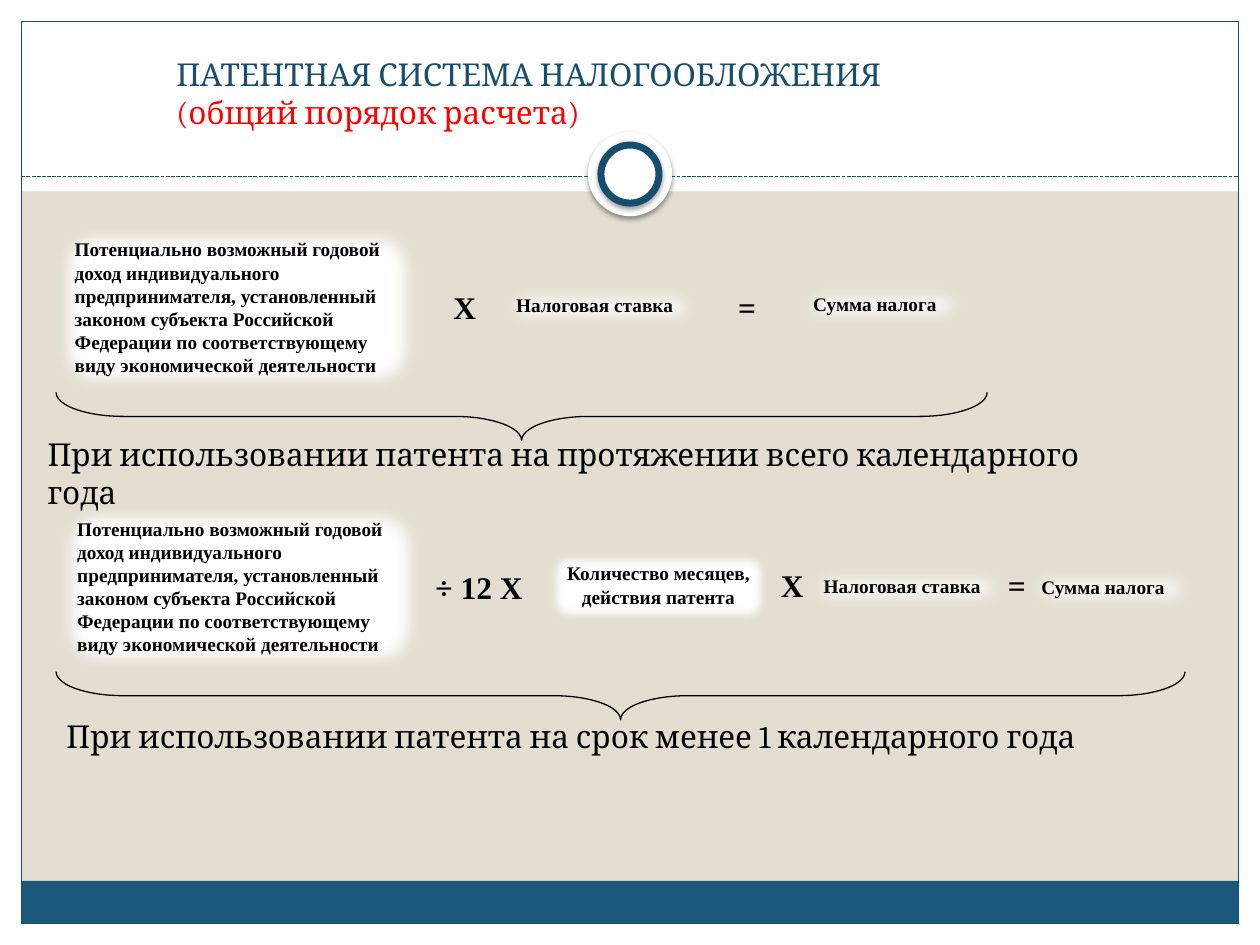
from lxml.etree import SubElement
from pptx import Presentation
from pptx.dml.color import RGBColor
from pptx.enum.dml import MSO_LINE_DASH_STYLE as Dash
from pptx.enum.shapes import MSO_CONNECTOR, MSO_SHAPE
from pptx.enum.text import MSO_ANCHOR, MSO_AUTO_SIZE, PP_ALIGN
from pptx.oxml import parse_xml
from pptx.oxml.ns import nsdecls, qn
from pptx.util import Cm, Pt

COLORS = {"paper": "E3DED1", "white": "FFFFFF", "navy": "184E6D",
          "footer": "1B587C", "black": "000000", "red": "FF0000"}
HEADING_FONT = "Cambria"
FORMULA_FONT = "Times New Roman"
WIDTH, HEIGHT = 25.4, 19.05
MARGIN = 0.43

INCOME = ("Потенциально возможный годовой доход индивидуального предпринимателя, "
          "установленный законом субъекта Российской Федерации по "
          "соответствующему виду экономической деятельности")
RATE = "Налоговая ставка"
TAX = "Сумма налога"
MONTHS = "Количество месяцев, действия патента"


def color(name):
    return RGBColor.from_string(COLORS[name])


class SlideBuilder:
    """Holds the current slide and draws its elements; lengths are in cm."""

    def __init__(self, slide):
        self.slide = slide
        self.shapes = slide.shapes
        fill = slide.background.fill
        fill.solid()
        fill.fore_color.rgb = color("paper")

    def shape(self, kind, box, fill=None, line=None, weight=0.75):
        shape = self.shapes.add_shape(kind, *map(Cm, box))
        shape.shadow.inherit = False
        if fill:
            shape.fill.solid()
            shape.fill.fore_color.rgb = color(fill)
        else:
            shape.fill.background()
        if line:
            shape.line.color.rgb = color(line)
            shape.line.width = Pt(weight)
        else:
            shape.line.fill.background()
        return shape

    def effect(self, shape, xml):
        shape._element.spPr.find(qn("a:effectLst")).append(parse_xml(xml))

    def ring(self, center_x, center_y, diameter, line=None):
        """White circle with a soft shadow below it."""
        box = (center_x - diameter / 2, center_y - diameter / 2, diameter, diameter)
        circle = self.shape(MSO_SHAPE.OVAL, box, "white", line, 4)
        self.effect(circle, f'<a:outerShdw {nsdecls("a")} blurRad="39400" dist="20300" '
                            'dir="5400000" rotWithShape="0"><a:srgbClr val="000000">'
                            '<a:alpha val="38000"/></a:srgbClr></a:outerShdw>')

    def dashed_line(self, left, right, y):
        line = self.shapes.add_connector(
            MSO_CONNECTOR.STRAIGHT, Cm(left), Cm(y), Cm(right), Cm(y))
        line.line.color.rgb = color("navy")
        line.line.width = Pt(0.75)
        line.line.dash_style = Dash.SQUARE_DOT
        SubElement(line._element.spPr, qn("a:effectLst"))

    def title(self, heading, subheading, box):
        title = self.shapes.title
        title.left, title.top, title.width, title.height = map(Cm, box)
        self.shapes._spTree.append(title._element)  # bring in front of the bands
        frame = title.text_frame
        frame.word_wrap = True
        frame.auto_size = MSO_AUTO_SIZE.NONE
        frame.vertical_anchor = MSO_ANCHOR.BOTTOM
        frame.margin_bottom = Cm(0.48)
        paragraph = frame.paragraphs[0]
        paragraph.alignment = PP_ALIGN.LEFT
        paragraph.font.size = Pt(18)
        paragraph.font.name = HEADING_FONT
        first = paragraph.add_run()
        first.text = heading
        first.font.color.rgb = color("navy")
        paragraph.add_line_break()
        second = paragraph.add_run()
        second.text = subheading
        second.font.color.rgb = color("red")

    def set_text(self, shape, text, size, font, bold, align=PP_ALIGN.LEFT):
        frame = shape.text_frame
        frame.word_wrap = True
        frame.vertical_anchor = MSO_ANCHOR.TOP
        paragraph = frame.paragraphs[0]
        paragraph.text = text
        paragraph.alignment = align
        paragraph.font.size = Pt(size)
        paragraph.font.name = font
        paragraph.font.bold = bold
        paragraph.font.color.rgb = color("black")
        return paragraph

    def term(self, text, box, align=PP_ALIGN.LEFT, soft_edge=8.86):
        """Soft-edged white box with one term of a formula."""
        shape = self.shape(MSO_SHAPE.ROUNDED_RECTANGLE, box, "white")
        self.effect(shape, f'<a:softEdge {nsdecls("a")} rad="{int(Pt(soft_edge))}"/>')
        paragraph = self.set_text(shape, text, 11, FORMULA_FONT, True, align)
        paragraph.space_after = Pt(10)

    def label(self, text, left, top, width, font=FORMULA_FONT, bold=True):
        textbox = self.shapes.add_textbox(Cm(left), Cm(top), Cm(width), Cm(1.03))
        self.set_text(textbox, text, 18, font, bold)
        textbox.text_frame.auto_size = MSO_AUTO_SIZE.SHAPE_TO_FIT_TEXT

    def caption(self, text, left, top, width):
        self.label(text, left, top, width, HEADING_FONT, False)

    def brace(self, left, top, length, depth=0.97):
        """Brace under a formula, pointing down."""
        box = (left + (length - depth) / 2, top + (depth - length) / 2, depth, length)
        shape = self.shape(MSO_SHAPE.RIGHT_BRACE, box, line="black")
        shape.rotation = 90
        shape.adjustments[0] = 1.4
        shape.adjustments[1] = 0.5


def draw_frame(builder):
    inner = WIDTH - 2 * MARGIN
    for band in ((0, HEIGHT - MARGIN, WIDTH, MARGIN), (0, 0, WIDTH, 3.86),
                 (0, 0, MARGIN, HEIGHT), (WIDTH - MARGIN, 0, MARGIN, HEIGHT)):
        builder.shape(MSO_SHAPE.RECTANGLE, band, "white")
    builder.shape(MSO_SHAPE.RECTANGLE, (MARGIN, 17.76, inner, 0.86), "footer")
    builder.shape(MSO_SHAPE.RECTANGLE, (MARGIN, MARGIN, inner, HEIGHT - 2 * MARGIN),
                  line="navy")
    builder.dashed_line(MARGIN, WIDTH - MARGIN, 3.56)
    builder.ring(WIDTH / 2, 3.51, 1.7)
    builder.ring(WIDTH / 2, 3.51, 1.17, "navy")


def draw_full_year(builder):
    builder.term(INCOME, (1.09, 4.5, 7.39, 3.43))
    builder.term(RATE, (10.11, 5.74, 3.99, 0.91))
    builder.term(TAX, (16.1, 5.72, 3.4, 0.89))
    builder.brace(1.13, 7.91, 18.77)
    builder.label("X", 8.89, 5.69, 1.19)
    builder.label("=", 14.63, 5.69, 1.27)
    builder.caption("При использовании патента на протяжении всего календарного года",
                    0.71, 8.64, 22.4)


def draw_part_year(builder):
    builder.term(INCOME, (1.14, 10.13, 7.39, 3.43))
    builder.term(MONTHS, (11.05, 11.13, 4.45, 1.42), PP_ALIGN.CENTER, 5)
    builder.term(RATE, (16.31, 11.4, 3.99, 0.91))
    builder.term(TAX, (20.7, 11.43, 3.4, 0.89))
    builder.label("÷ 12 Х", 8.53, 11.33, 2.39)
    builder.label("=", 20.07, 11.28, 1.27)
    builder.label("X", 15.49, 11.28, 1.19)
    builder.brace(1.13, 13.54, 22.76)
    builder.caption("При использовании патента на срок менее 1 календарного года",
                    1.09, 14.33, 22.81)


def main():
    presentation = Presentation()
    presentation.slide_width = Cm(WIDTH)
    presentation.slide_height = Cm(HEIGHT)
    title_only = presentation.slide_layouts[5]
    builder = SlideBuilder(presentation.slides.add_slide(title_only))
    draw_frame(builder)
    builder.title("ПАТЕНТНАЯ СИСТЕМА НАЛОГООБЛОЖЕНИЯ", "(общий порядок расчета)",
                  (3.3, 0.91, 21.01, 2.21))
    draw_full_year(builder)
    draw_part_year(builder)
    presentation.save("out.pptx")


if __name__ == "__main__":
    main()
